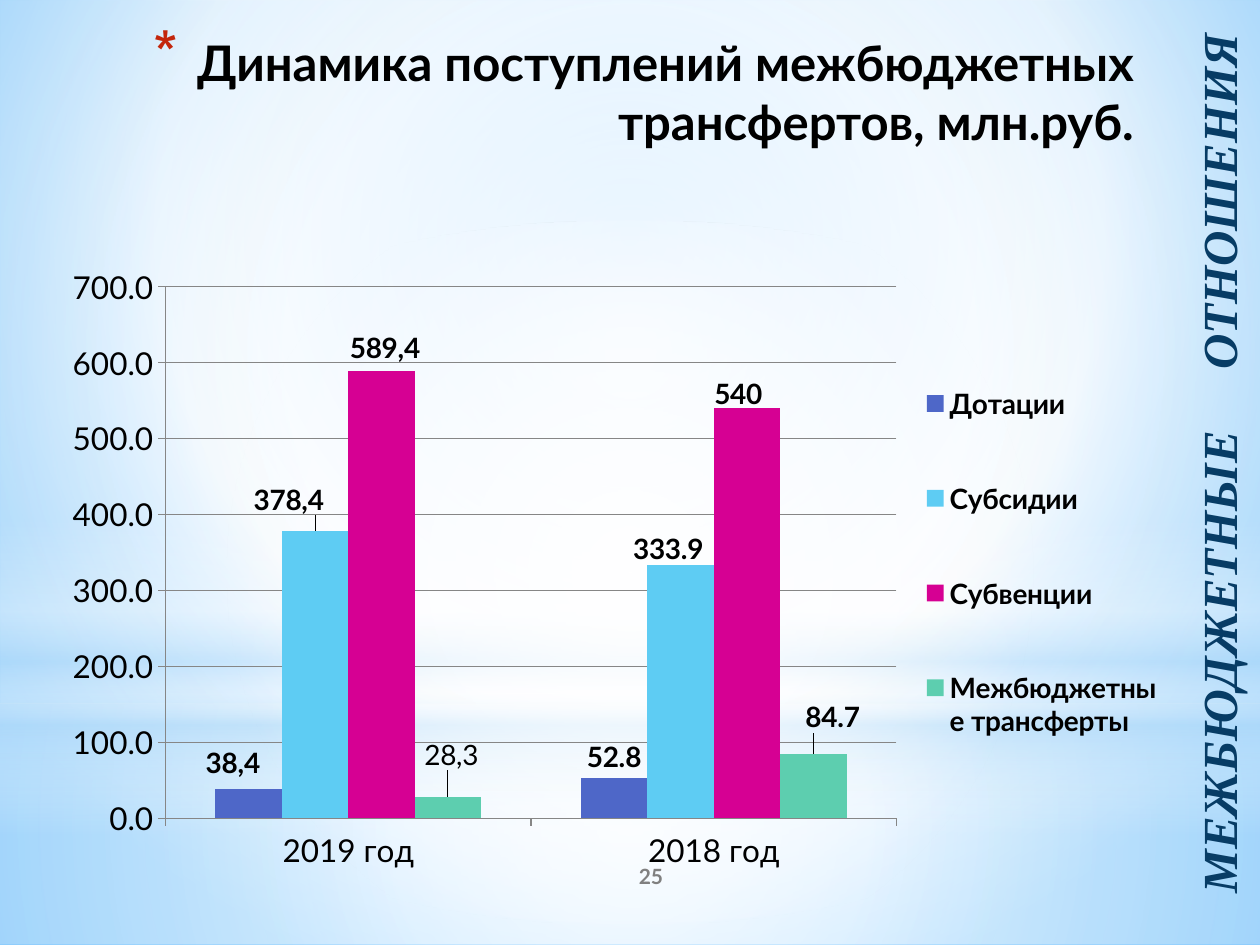
from lxml import etree
from pptx import Presentation
from pptx.chart.data import CategoryChartData
from pptx.dml.color import RGBColor
from pptx.enum import chart as ch, shapes, text
from pptx.oxml import parse_xml
from pptx.oxml.ns import nsdecls, qn
from pptx.util import Pt


def rgb(value):
    return RGBColor.from_string(value)


def set_gradient(parent, stops, shade):
    """Replace the gradient in parent; stops are (position %, colour, opacity %)."""
    old = parent.find(qn("a:gradFill"))
    gs = "".join(
        f'<a:gs pos="{pos * 1000}"><a:srgbClr val="{color}">'
        f'<a:alpha val="{alpha * 1000}"/></a:srgbClr></a:gs>'
        for pos, color, alpha in stops)
    if shade is None:
        kind = '<a:lin ang="5400000" scaled="0"/>'
    else:
        l, t, r, b = (side * 1000 for side in shade)
        kind = (f'<a:path path="circle"><a:fillToRect l="{l}" t="{t}" '
                f'r="{r}" b="{b}"/></a:path>')
    parent.replace(old, parse_xml(
        f'<a:gradFill {nsdecls("a")} rotWithShape="1"><a:gsLst>{gs}</a:gsLst>{kind}</a:gradFill>'))


prs = Presentation()
prs.slide_width, prs.slide_height = Pt(720), Pt(540)
s = prs.slides.add_slide(prs.slide_layouts[5])

# Background and its soft light layers
s.background.fill.gradient()
set_gradient(s.element.find(".//" + qn("p:bgPr")),
             [(0, "9ED5FF", 100), (60, "FFFFFF", 100), (100, "5BB9FF", 100)],
             (20, 10, 20, 60))
centre = (50, 50, 50, 50)
rect, oval = shapes.MSO_SHAPE.RECTANGLE, shapes.MSO_SHAPE.OVAL
layers = [
    (rect, 402, 138, [(0, "FFFFFF", 91), (37, "FFFFFF", 76), (100, "B4DCFA", 79)], centre),
    (rect, 0, 402, [(0, "FFFFFF", 89), (48, "FFFFFF", 62), (100, "B4DCFA", 79)], centre),
    (rect, 297, 180, [(0, "FFFFFF", 0), (29, "FFFFFF", 30), (45, "B4DCFA", 40),
                      (55, "FFFFFF", 26), (65, "B4DCFA", 60), (100, "FFFFFF", 0)], None),
    (oval, 126, 402, [(0, "FFFFFF", 100), (56, "FFFFFF", 0)], centre),
]
for preset, top, height, stops, shade in layers:
    sp = s.shapes.add_shape(preset, 0, Pt(top), prs.slide_width, Pt(height))
    sp.shadow.inherit = False
    sp.line.fill.background()
    sp.fill.gradient()
    set_gradient(sp.element.spPr, stops, shade)

# Page number
sp = s.shapes.add_textbox(Pt(300), Pt(486), Pt(144), Pt(28.8))
tf = sp.text_frame
tf.word_wrap = True
tf.vertical_anchor = text.MSO_ANCHOR.MIDDLE
tf.text = "25"
p = tf.paragraphs[0]
p.alignment = text.PP_ALIGN.CENTER
font = p.runs[0].font
font.name, font.size, font.bold = "Lato", Pt(12), True
font.color.rgb = rgb("808080")

# Title, moved in front of the light layers
title = s.shapes.title
s.shapes._spTree.append(title.element)
title.left, title.top, title.width, title.height = Pt(31), Pt(15), Pt(624), Pt(96.5)
tf = title.text_frame
tf.auto_size = text.MSO_AUTO_SIZE.NONE
tf.vertical_anchor = text.MSO_ANCHOR.TOP
tf.text = "Динамика поступлений межбюджетных трансфертов, млн.руб."
p = tf.paragraphs[0]
p.alignment = text.PP_ALIGN.RIGHT
pPr = p._p.get_or_add_pPr()
pPr.set("marL", str(Pt(25)))
pPr.set("indent", str(-Pt(25)))
color = etree.SubElement(pPr, qn("a:buClr"))
etree.SubElement(color, qn("a:srgbClr"), val="C3260C")
etree.SubElement(pPr, qn("a:buSzPct"), val="128000")
etree.SubElement(pPr, qn("a:buChar"), char="*")
font = p.runs[0].font
font.name, font.size, font.bold = "Lato", Pt(28), True
font.color.rgb = rgb("000000")

# Chart: each label is (text or None for the value, bold, shift right, shift down)
series = [
    ("Дотации", "4E67C8", (38.4, 52.8),
     [("38,4", True, -9, -3), (None, True, 0, 0)]),
    ("Субсидии", "5ECCF3", (378.4, 333.9),
     [("378,4", True, -15, -6), (None, True, -7, 3)]),
    ("Субвенции", "D60093", (589.4, 540),
     [("589,4", True, 2, -1), (None, True, -5, 4)]),
    ("Межбюджетные трансферты", "5DCEAF", (28.3, 84.7),
     [("28,3", False, 2, -12), (None, True, 11, -9)]),
]
data = CategoryChartData()
data.categories = ["2019 год", "2018 год"]
for name, _, values, _ in series:
    data.add_series(name, values)
chart_w, chart_h = 663, 366
chart = s.shapes.add_chart(ch.XL_CHART_TYPE.COLUMN_CLUSTERED, Pt(8.5), Pt(145.5),
                           Pt(chart_w), Pt(chart_h), data).chart
chart.has_title = False
chart.font.name, chart.font.size = "Lato", Pt(18)
chart.font.color.rgb = rgb("000000")

plot = chart.plots[0]
plot.gap_width, plot.overlap = 150, 0
plot.vary_by_categories = False
for ser, (_, color, _, labels) in zip(plot.series, series):
    ser.format.fill.solid()
    ser.format.fill.fore_color.rgb = rgb(color)
    ser.invert_if_negative = False
    for i, (caption, bold, dx, dy) in enumerate(labels):
        label = ser.points[i].data_label
        if caption:
            label.text_frame.text = caption
            font = label.text_frame.paragraphs[0].runs[0].font
        else:
            font = label.font
        font.name, font.size, font.bold = "Lato", Pt(16), bold
        font.color.rgb = rgb("000000")
        label.position = ch.XL_LABEL_POSITION.OUTSIDE_END
        if dx or dy:
            dLbl = ser._element.xpath(".//c:dLbl")[i]
            dLbl.insert(1, parse_xml(
                f'<c:layout {nsdecls("c")}><c:manualLayout><c:x val="{dx / chart_w}"/>'
                f'<c:y val="{dy / chart_h}"/></c:manualLayout></c:layout>'))

axis = chart.value_axis
axis.minimum_scale, axis.maximum_scale, axis.major_unit = 0, 700, 100
axis.tick_labels.number_format = "#,##0.0"
axis.tick_labels.number_format_is_linked = False
axis.has_major_gridlines = True
for line in (axis.format.line, axis.major_gridlines.format.line,
             chart.category_axis.format.line):
    line.color.rgb = rgb("868686")
    line.width = Pt(0.75)
for axis in (chart.value_axis, chart.category_axis):
    axis.major_tick_mark = ch.XL_TICK_MARK.OUTSIDE

chart.has_legend = True
legend = chart.legend
legend.position = ch.XL_LEGEND_POSITION.RIGHT
legend.include_in_layout = False
font = legend.font
font.name, font.size, font.bold = "Lato", Pt(16), True
font.color.rgb = rgb("000000")

# Fixed places of the plot area and the legend, as parts of the chart
for part, target, box in [("plotArea", '<c:layoutTarget val="inner"/>', (0.13, 0.05, 0.63, 0.83)),
                          ("legend", "", (0.78, 0.11, 0.21, 0.74))]:
    element = chart._chartSpace.find(".//" + qn("c:" + part))
    old = element.find(qn("c:layout"))
    if old is not None:
        element.remove(old)
    sizes = "".join(f'<c:{key} val="{val}"/>' for key, val in zip("xywh", box))
    layout = parse_xml(
        f'<c:layout {nsdecls("c")}><c:manualLayout>{target}<c:xMode val="edge"/>'
        f'<c:yMode val="edge"/>{sizes}</c:manualLayout></c:layout>')
    element.insert(0 if part == "plotArea" else 1, layout)

# Section name along the right edge; the word gap is a widened space
sp = s.shapes.add_textbox(Pt(418.5), Pt(236), Pt(530.5), Pt(57.5))
sp.rotation = 270
tf = sp.text_frame
tf.word_wrap = True
tf.vertical_anchor = text.MSO_ANCHOR.BOTTOM
tf.margin_left = tf.margin_right = Pt(3.6)
tf.margin_top = tf.margin_bottom = 0
p = tf.paragraphs[0]
p.alignment = text.PP_ALIGN.CENTER
for word in ("МЕЖБЮДЖЕТНЫЕ", " ", "ОТНОШЕНИЯ"):
    r = p.add_run()
    r.text = word
    font = r.font
    font.name, font.size, font.bold, font.italic = "Times New Roman", Pt(28), True, True
    font.color.rgb = rgb("073C65")
    if word == " ":
        r._r.get_or_add_rPr().set("spc", "2800")

prs.save("out.pptx")
